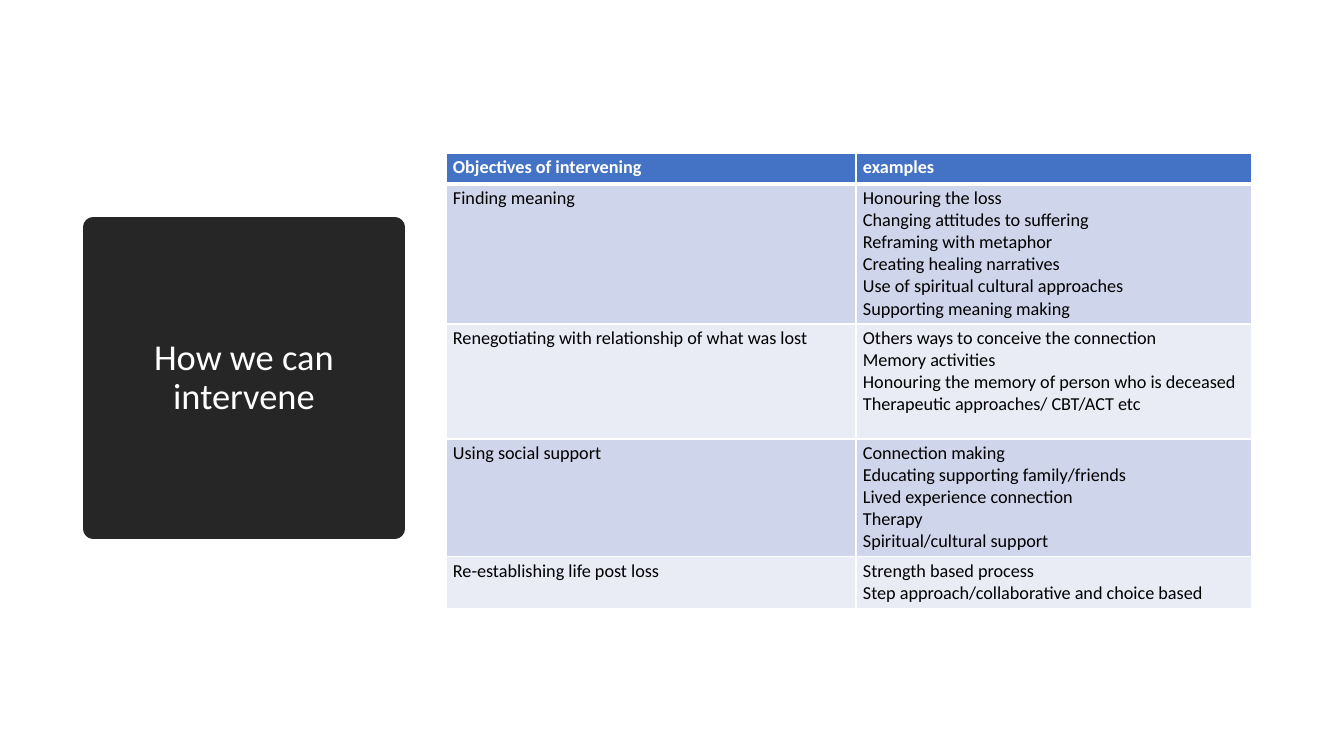
from lxml import etree
from pptx import Presentation
from pptx.dml.color import RGBColor
from pptx.enum.text import MSO_ANCHOR, MSO_AUTO_SIZE, PP_ALIGN
from pptx.oxml.ns import qn
from pptx.util import Pt

MIDDLE = MSO_ANCHOR.MIDDLE
NO_AUTOFIT = MSO_AUTO_SIZE.NONE
CENTER = PP_ALIGN.CENTER

TITLE = "How we can intervene"
HEADERS = ("Objectives of intervening", "examples")
OBJECTIVES = {
    "Finding meaning": [
        "Honouring the loss",
        "Changing attitudes to suffering",
        "Reframing with metaphor",
        "Creating healing narratives",
        "Use of spiritual cultural approaches",
        "Supporting meaning making",
    ],
    "Renegotiating with relationship of what was lost": [
        "Others ways to conceive the connection",
        "Memory activities",
        "Honouring the memory of person who is deceased",
        "Therapeutic approaches/ CBT/ACT etc",
    ],
    "Using social support": [
        "Connection making",
        "Educating supporting family/friends",
        "Lived experience connection",
        "Therapy",
        "Spiritual/cultural support",
    ],
    "Re-establishing life post loss": [
        "Strength based process",
        "Step approach/collaborative and choice based",
    ],
}

FONT = "Calibri"
WHITE, BLACK, DARK = "FFFFFF", "000000", "262626"
HEADER_FILL = "4472C4"
BAND_FILLS = ("CFD5EA", "E9EBF5")

SLIDE_SIZE = (1344, 756)
TITLE_BOX = (93, 227, 302, 302)
TABLE_CORNER = (446, 153)
COLUMN_WIDTHS = (410, 396)
ROW_HEIGHTS = (31, 140, 115, 118, 52)
CELL_INSET_X, CELL_INSET_Y = 7, 3


def px(length):
    return round(length * 12192000 / 1344)


def color(value):
    return RGBColor.from_string(value)


def format_text(frame, size, text_color, bold=False):
    for para in frame.paragraphs:
        for span in para.runs:
            span.font.name = FONT
            span.font.size = Pt(size)
            span.font.bold = bold
            span.font.color.rgb = color(text_color)


def add_borders(cell, bottom_width):
    """Put white lines around a cell, ahead of its fill in the XML order."""
    properties = cell._tc.get_or_add_tcPr()
    widths = {"a:lnL": 1, "a:lnR": 1, "a:lnT": 1, "a:lnB": bottom_width}
    for position, (tag, width) in enumerate(widths.items()):
        border = etree.Element(qn(tag), w=str(Pt(width)))
        fill = etree.SubElement(border, qn("a:solidFill"))
        etree.SubElement(fill, qn("a:srgbClr"), val=WHITE)
        properties.insert(position, border)


def fill_cell(cell, text, fill, text_color, header):
    cell.text_frame.text = text
    format_text(cell.text_frame, 13, text_color, header)
    cell.margin_left = cell.margin_right = px(CELL_INSET_X)
    cell.margin_top = cell.margin_bottom = px(CELL_INSET_Y)
    cell.fill.solid()
    cell.fill.fore_color.rgb = color(fill)
    add_borders(cell, 3 if header else 1)


def add_title(page):
    title = page.shapes.title
    title.left, title.top, title.width, title.height = map(px, TITLE_BOX)
    title.fill.solid()
    title.fill.fore_color.rgb = color(DARK)
    title.line.color.rgb = color(DARK)
    title.line.width = Pt(13.75)
    etree.SubElement(title.line._get_or_add_ln(), qn("a:round"))
    frame = title.text_frame
    frame.text = TITLE
    frame.word_wrap = True
    frame.auto_size = NO_AUTOFIT
    frame.vertical_anchor = MIDDLE
    frame.paragraphs[0].alignment = CENTER
    frame.paragraphs[0].line_spacing = 0.9
    format_text(frame, 26, WHITE)


def add_objectives_table(page):
    rows = [HEADERS] + [(name, "\n".join(examples)) for name, examples in OBJECTIVES.items()]
    size = (sum(COLUMN_WIDTHS), sum(ROW_HEIGHTS))
    table = page.shapes.add_table(
        len(rows), len(HEADERS), *map(px, TABLE_CORNER + size)
    ).table
    for column, width in zip(table.columns, COLUMN_WIDTHS):
        column.width = px(width)
    for row, height in zip(table.rows, ROW_HEIGHTS):
        row.height = px(height)
    for i, texts in enumerate(rows):
        header = i == 0
        fill = HEADER_FILL if header else BAND_FILLS[(i - 1) % 2]
        for j, text in enumerate(texts):
            fill_cell(table.cell(i, j), text, fill, WHITE if header else BLACK, header)


def main():
    deck = Presentation()
    deck.slide_width, deck.slide_height = map(px, SLIDE_SIZE)
    page = deck.slides.add_slide(deck.slide_layouts.get_by_name("Title Only"))
    add_title(page)
    add_objectives_table(page)
    deck.save("out.pptx")


if __name__ == "__main__":
    main()
